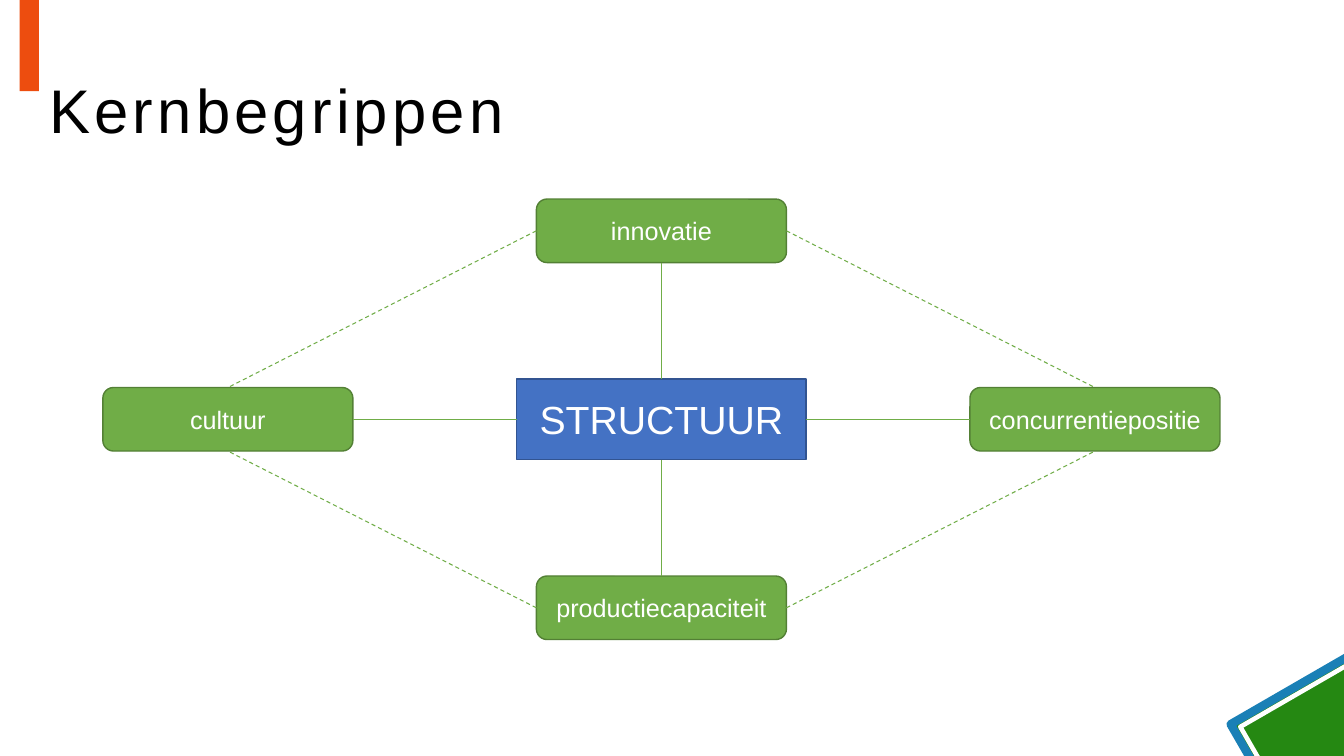
"""Build the slide with the key concepts around the structure."""
import pptx
import pptx.dml.color
import pptx.enum.dml
import pptx.enum.shapes
import pptx.enum.text
import pptx.oxml.ns
import pptx.util
from lxml import etree

WIDTH, HEIGHT = 13.33, 7.5
FONT = "Arial"
COLORS = {
    "black": "000000", "white": "FFFFFF", "orange": "ED4D0F",
    "corner": "258812", "corner_edge": "1A80B6",
    "concept": "70AD47", "concept_edge": "538035",
    "core": "4472C4", "core_edge": "325491",
}
TITLE = "Kernbegrippen"
CORE = "STRUCTUUR"
CORE_SIZE = (2.87, 0.8)
CONCEPT_SIZE = (2.48, 0.63)
CENTER = (6.56, 4.16)
STEP = (4.3, 1.87)
TOP, LEFT, BOTTOM, RIGHT = range(4)
CONCEPTS = {
    BOTTOM: ("productiecapaciteit", 0, 1),
    TOP: ("innovatie", 0, -1),
    RIGHT: ("concurrentiepositie", 1, 0),
    LEFT: ("cultuur", -1, 0),
}
OPPOSITE = {TOP: BOTTOM, BOTTOM: TOP, LEFT: RIGHT, RIGHT: LEFT}
CORNER_CENTER = (13.23, 7.46)
CORNER_SQUARES = [
    (1.5, "corner", "corner_edge", 6),
    (1.36, None, "white", 3.25),
]
SHAPES = pptx.enum.shapes.MSO_SHAPE


def color(name):
    return pptx.dml.color.RGBColor.from_string(COLORS[name])


def add_block(page, kind, center, size, fill=None, edge=None, weight=1):
    left, top = (middle - length / 2 for middle, length in zip(center, size))
    block = page.shapes.add_shape(
        kind, *map(pptx.util.Inches, (left, top, *size)))
    block.shadow.inherit = False
    if fill:
        block.fill.solid()
        block.fill.fore_color.rgb = color(fill)
    else:
        block.fill.background()
    if edge:
        block.line.color.rgb = color(edge)
        block.line.width = pptx.util.Pt(weight)
    else:
        block.line.fill.background()
    return block


def write(box, text, size, ink="white", align="CENTER", line_spacing=None,
          letter_spacing=None):
    frame = box.text_frame
    frame.word_wrap = True
    frame.vertical_anchor = pptx.enum.text.MSO_ANCHOR.MIDDLE
    para = frame.paragraphs[0]
    para.alignment = pptx.enum.text.PP_ALIGN[align]
    para.line_spacing = line_spacing
    span = para.add_run()
    span.text = text
    span.font.name = FONT
    span.font.size = pptx.util.Pt(size)
    span.font.color.rgb = color(ink)
    if letter_spacing:
        span.font._element.set("spc", str(letter_spacing * 100))


def connect(page, start, start_side, end, end_side, weight=1, dashed=False):
    link = page.shapes.add_connector(
        pptx.enum.shapes.MSO_CONNECTOR.STRAIGHT, 0, 0, 0, 0)
    link.begin_connect(start, start_side)
    link.end_connect(end, end_side)
    link.line.color.rgb = color("concept")
    link.line.width = pptx.util.Pt(weight)
    if dashed:
        link.line.dash_style = pptx.enum.dml.MSO_LINE.DASH
    etree.SubElement(link._element.spPr, pptx.oxml.ns.qn("a:effectLst"))


def main():
    deck = pptx.Presentation()
    deck.slide_width = pptx.util.Inches(WIDTH)
    deck.slide_height = pptx.util.Inches(HEIGHT)
    page = deck.slides.add_slide(deck.slide_layouts[6])

    add_block(page, SHAPES.RECTANGLE, (0.29, 0.33), (0.19, 1.15), "orange")
    for side, fill, edge, weight in CORNER_SQUARES:
        square = add_block(page, SHAPES.RECTANGLE, CORNER_CENTER,
                           (side, side), fill, edge, weight)
        square.rotation = 60

    title = page.shapes.add_textbox(
        *map(pptx.util.Inches, (0.39, 0.4, 12.58, 1.45)))
    write(title, TITLE, 44, ink="black", align="LEFT", line_spacing=0.9,
          letter_spacing=3)

    core = add_block(page, SHAPES.FLOWCHART_PROCESS, CENTER, CORE_SIZE,
                     "core", "core_edge")
    write(core, CORE, 28)

    concepts = {}
    for side, (label, across, down) in CONCEPTS.items():
        center = (CENTER[0] + across * STEP[0], CENTER[1] + down * STEP[1])
        concepts[side] = add_block(page, SHAPES.ROUNDED_RECTANGLE, center,
                                   CONCEPT_SIZE, "concept", "concept_edge")
        write(concepts[side], label, 18)
        connect(page, core, side, concepts[side], OPPOSITE[side])

    for row in (TOP, BOTTOM):
        for column in (LEFT, RIGHT):
            connect(page, concepts[row], column, concepts[column], row,
                    weight=0.75, dashed=True)

    deck.save("out.pptx")


if __name__ == "__main__":
    main()
